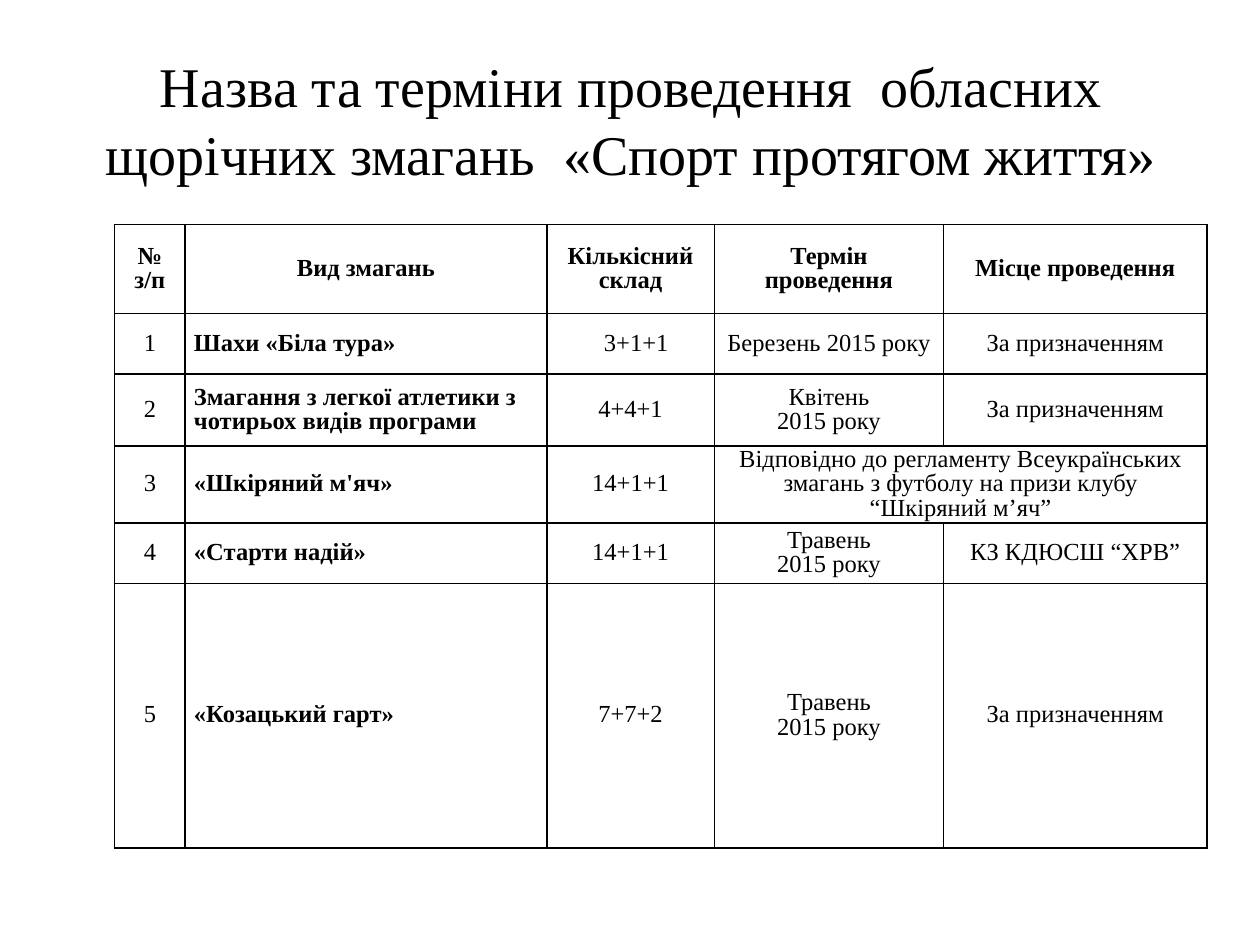
"""Build a slide with the schedule of the annual regional competitions."""
import pptx
import pptx.dml.color
import pptx.enum.text
import pptx.oxml
import pptx.oxml.ns
import pptx.util
from pptx.util import Inches

COLORS = {"text": "000000", "border": "000000"}
TITLE = "Назва та терміни проведення  обласних щорічних змагань  «Спорт протягом життя»"
COLUMN_WIDTHS = [0.56, 2.87, 1.33, 1.82, 2.09]
ROW_HEIGHTS = [0.71, 0.48, 0.57, 0.61, 0.48, 2.1]
NAME_COLUMN = 1
BY_ASSIGNMENT = "За призначенням"
ROWS = [
    ["№\nз/п", "Вид змагань", "Кількісний склад", "Термін проведення", "Місце проведення"],
    ["1", "Шахи «Біла тура»", "3+1+1", "Березень 2015 року", BY_ASSIGNMENT],
    ["2", "Змагання з легкої атлетики з чотирьох видів програми", "4+4+1",
     "Квітень\n2015 року", BY_ASSIGNMENT],
    ["3", "«Шкіряний м'яч»", "14+1+1",
     "Відповідно до регламенту Всеукраїнських змагань з футболу на призи клубу “Шкіряний м’яч”"],
    ["4", "«Старти надій»", "14+1+1", "Травень\n2015 року", "КЗ КДЮСШ “ХРВ”"],
    ["5", "«Козацький гарт»", "7+7+2", "Травень\n2015 року", BY_ASSIGNMENT],
]
INDENTS = {(1, 2): 0.09}


class SlideBuilder:
    """Hold the text style and the current slide."""

    font_name = "Times New Roman"
    title_size = 32
    cell_size = 14
    border_width = 1
    line_spacing = 0.9

    def __init__(self, presentation):
        """Add a title-only slide to the presentation."""
        self.slide = presentation.slides.add_slide(presentation.slide_layouts[5])

    def add_run(self, paragraph, text, size, bold=False):
        """Add one styled run to a paragraph."""
        run = paragraph.add_run()
        run.text = text
        run.font.name = self.font_name
        run.font.size = pptx.util.Pt(size)
        run.font.bold = bold
        run.font.color.rgb = pptx.dml.color.RGBColor.from_string(COLORS["text"])

    def add_title(self, text, left, top, width, height):
        """Place and fill the title placeholder."""
        title = self.slide.shapes.title
        title.left, title.top = Inches(left), Inches(top)
        title.width, title.height = Inches(width), Inches(height)
        frame = title.text_frame
        frame.word_wrap = True
        frame.auto_size = pptx.enum.text.MSO_AUTO_SIZE.NONE
        frame.vertical_anchor = pptx.enum.text.MSO_ANCHOR.MIDDLE
        paragraph = frame.paragraphs[0]
        paragraph.alignment = pptx.enum.text.PP_ALIGN.CENTER
        self.add_run(paragraph, text, self.title_size)

    def set_borders(self, cell):
        """Draw a solid line on every side of a cell."""
        properties = cell._tc.get_or_add_tcPr()
        width = pptx.util.Pt(self.border_width)
        namespace = pptx.oxml.ns.nsdecls("a")
        for side in "LRTB":
            properties.append(pptx.oxml.parse_xml(
                f'<a:ln{side} {namespace} w="{width}"><a:solidFill>'
                f'<a:srgbClr val="{COLORS["border"]}"/></a:solidFill></a:ln{side}>'))

    def fill_cell(self, cell, text, bold, alignment, indent):
        """Write the lines of a cell as paragraphs."""
        cell.vertical_anchor = pptx.enum.text.MSO_ANCHOR.MIDDLE
        cell.margin_left = cell.margin_right = Inches(0.07)
        cell.margin_top = cell.margin_bottom = 0
        frame = cell.text_frame
        for index, line in enumerate(text.split("\n")):
            paragraph = frame.add_paragraph() if index else frame.paragraphs[0]
            paragraph.alignment = alignment
            paragraph.line_spacing = self.line_spacing
            if indent:
                paragraph._p.get_or_add_pPr().set("marL", str(Inches(indent)))
            self.add_run(paragraph, line, self.cell_size, bold)

    def add_table(self, rows, left, top, column_widths, row_heights):
        """Add a bordered table, merging the end of any short row."""
        align = pptx.enum.text.PP_ALIGN
        table = self.slide.shapes.add_table(
            len(row_heights), len(column_widths), Inches(left), Inches(top),
            Inches(sum(column_widths)), Inches(sum(row_heights))).table
        table.first_row = table.horz_banding = False
        for column, width in zip(table.columns, column_widths):
            column.width = Inches(width)
        for row, height in zip(table.rows, row_heights):
            row.height = Inches(height)
        for cell in table.iter_cells():
            self.set_borders(cell)
            cell.fill.background()
        last = len(column_widths) - 1
        for row_index, texts in enumerate(rows):
            if len(texts) <= last:
                table.cell(row_index, len(texts) - 1).merge(table.cell(row_index, last))
            for column_index, text in enumerate(texts):
                is_header = row_index == 0
                is_name = column_index == NAME_COLUMN
                self.fill_cell(
                    table.cell(row_index, column_index), text, is_header or is_name,
                    align.LEFT if is_name and not is_header else align.CENTER,
                    INDENTS.get((row_index, column_index)))


def main():
    """Build and save the presentation."""
    presentation = pptx.Presentation()
    presentation.slide_width = Inches(10)
    presentation.slide_height = Inches(7.5)
    builder = SlideBuilder(presentation)
    builder.add_title(TITLE, 0.51, 0.68, 9, 0.53)
    builder.add_table(ROWS, 0.91, 1.78, COLUMN_WIDTHS, ROW_HEIGHTS)
    presentation.save("out.pptx")


if __name__ == "__main__":
    main()
